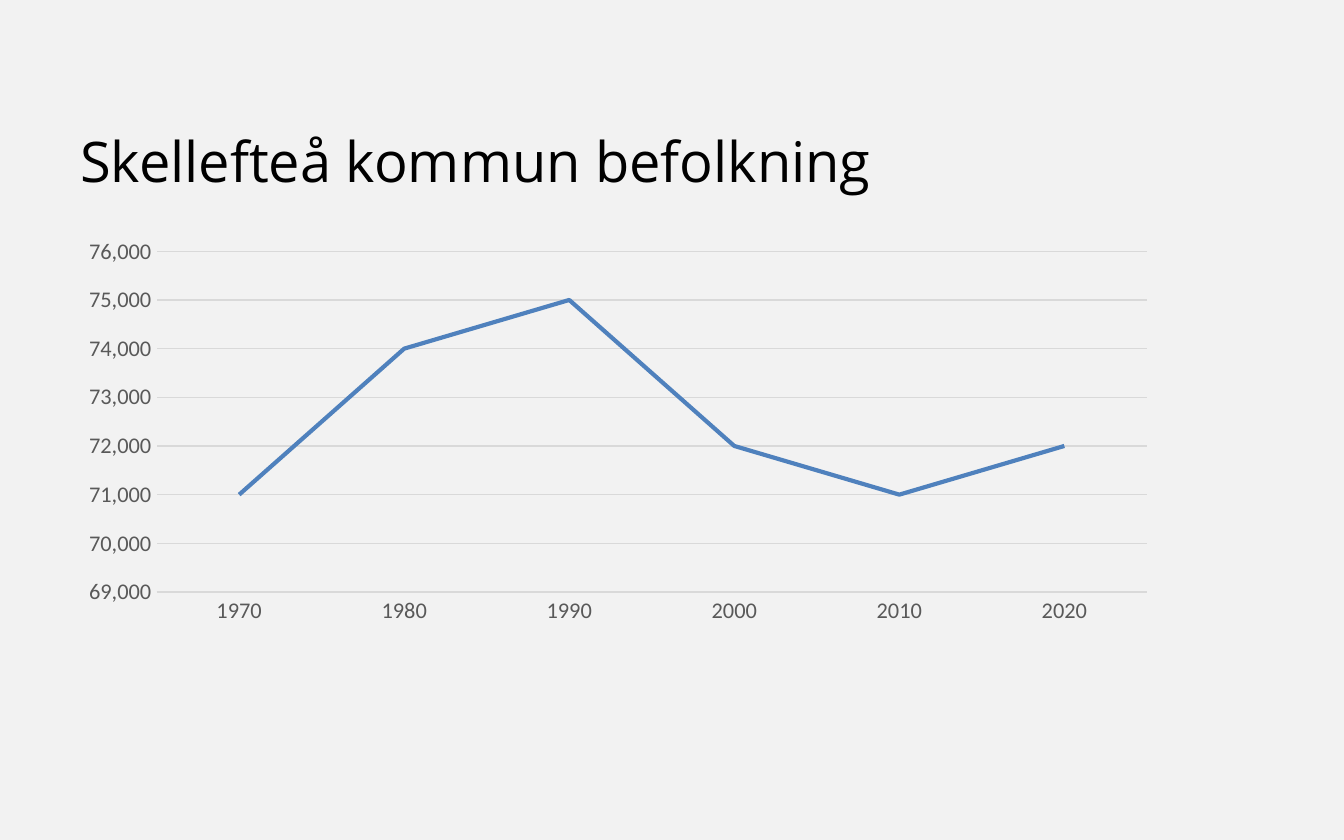
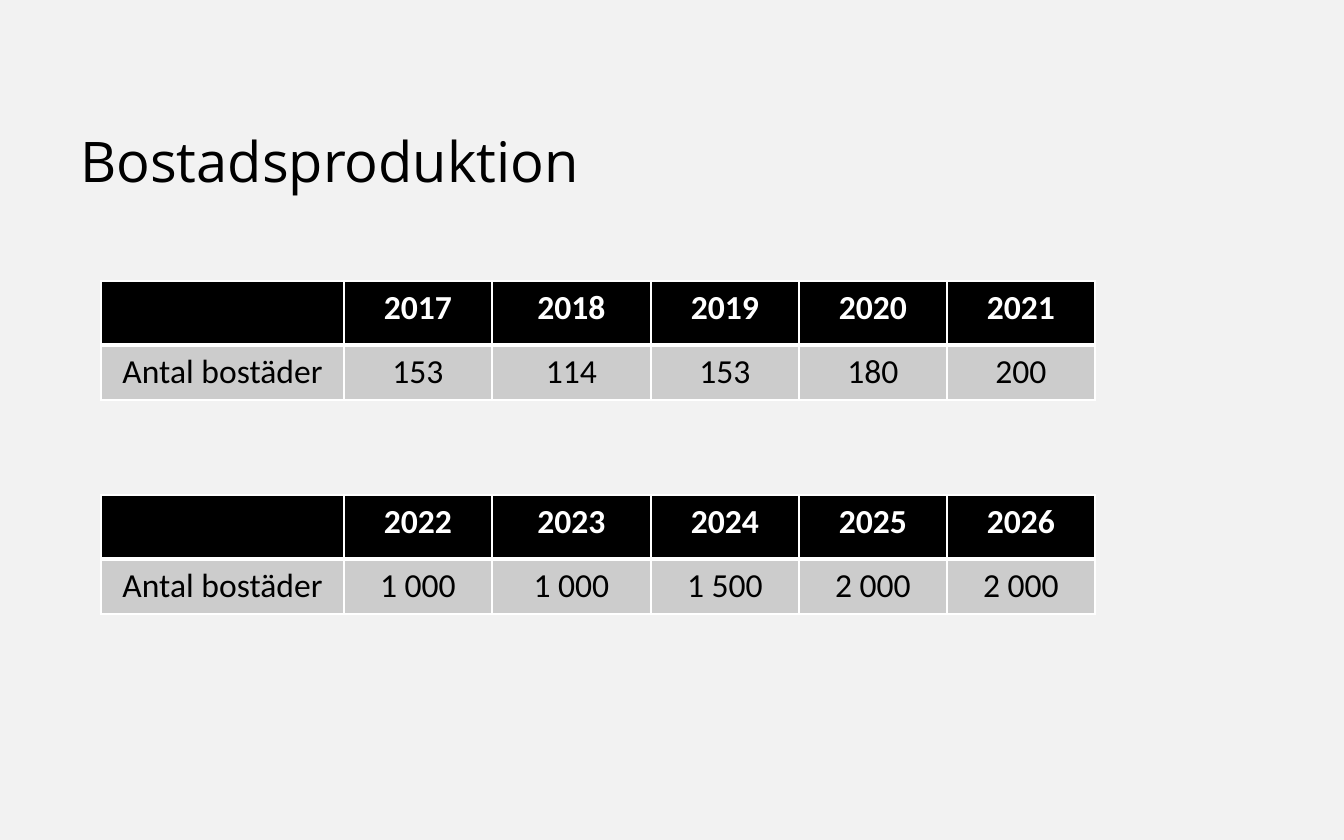
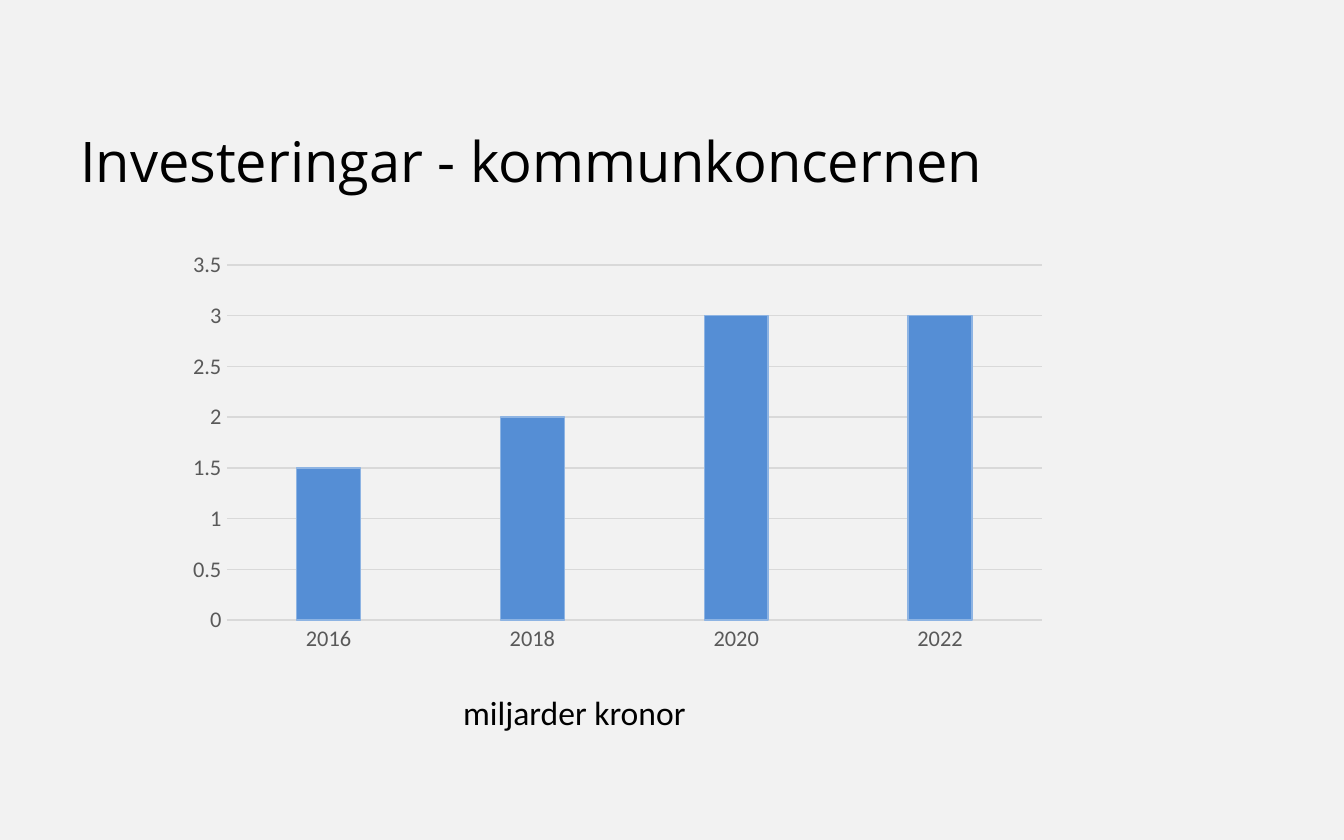
import pptx
import pptx.chart.data
import pptx.dml.color
import pptx.enum.chart
import pptx.enum.text
import pptx.oxml
import pptx.oxml.ns
import pptx.util

EMU_PER_PX = 914400 / 134.4
BLACK, WHITE, BACKGROUND = "000000", "FFFFFF", "F2F2F2"
AXIS_TEXT, GRID, CELL_GREY = "595959", "D9D9D9", "CCCCCC"
BODY_FONT, TITLE_FONT = "Calibri", "Open Sans"


def px(*lengths):
    return [pptx.util.Emu(round(length * EMU_PER_PX)) for length in lengths]


def color(value):
    return pptx.dml.color.RGBColor.from_string(value)


presentation = pptx.Presentation()
presentation.slide_width, presentation.slide_height = px(1344, 840)
background = presentation.slide_master.background.fill
background.solid()
background.fore_color.rgb = color(BACKGROUND)

# Slides and their titles
slides = []
for title in ["Skellefteå kommun befolkning", "Bostadsproduktion", "Investeringar - kommunkoncernen"]:
    slide = presentation.slides.add_slide(presentation.slide_layouts[6])
    title_frame = slide.shapes.add_textbox(*px(67, 90, 1210, 140)).text_frame
    title_frame.word_wrap = True
    title_frame.vertical_anchor = pptx.enum.text.MSO_ANCHOR.MIDDLE
    title_frame.text = title
    font = title_frame.paragraphs[0].runs[0].font
    font.name, font.size, font.color.rgb = TITLE_FONT, pptx.util.Pt(30), color(BLACK)
    slides.append(slide)
population_slide, housing_slide, investment_slide = slides

# Charts: slide, type, place, categories, values, axis range and step, number format
chart_types = pptx.enum.chart.XL_CHART_TYPE
chart_rows = [
    (population_slide, chart_types.LINE, (67, 230, 1102, 402),
     ["1970", "1980", "1990", "2000", "2010", "2020"],
     [71000, 74000, 75000, 72000, 71000, 72000], (69000, 76000, 1000), "#,##0"),
    (investment_slide, chart_types.COLUMN_CLUSTERED, (164, 198, 896, 515),
     ["2016", "2018", "2020", "2022"],
     [1.5, 2, 3, 3], (0, 3.5, 0.5), "General"),
]
charts = []
for slide, chart_type, place, categories, values, axis_range, number_format in chart_rows:
    chart_data = pptx.chart.data.CategoryChartData(number_format=number_format)
    chart_data.categories = categories
    chart_data.add_series("Series 1", values)
    chart = slide.shapes.add_chart(chart_type, *px(*place), chart_data).chart
    chart.has_legend = False
    chart.has_title = False
    chart.font.name, chart.font.size = BODY_FONT, pptx.util.Pt(10)
    chart.plots[0].vary_by_categories = False

    value_axis, category_axis = chart.value_axis, chart.category_axis
    for axis in (value_axis, category_axis):
        axis.major_tick_mark = axis.minor_tick_mark = pptx.enum.chart.XL_TICK_MARK.NONE
        font = axis.tick_labels.font
        font.name, font.size, font.color.rgb = BODY_FONT, pptx.util.Pt(12), color(AXIS_TEXT)
    value_axis.minimum_scale, value_axis.maximum_scale, value_axis.major_unit = axis_range
    value_axis.tick_labels.number_format = number_format
    value_axis.tick_labels.number_format_is_linked = False
    value_axis.format.line.fill.background()
    for line in (value_axis.major_gridlines.format.line, category_axis.format.line):
        line.color.rgb, line.width = color(GRID), pptx.util.Pt(0.75)
    charts.append(chart)
population_chart, investment_chart = charts

# Population line
population = population_chart.plots[0].series[0]
population.smooth = False
population.marker.style = pptx.enum.chart.XL_MARKER_STYLE.NONE
population.format.line.color.rgb = color("4F81BD")
population.format.line.width = pptx.util.Pt(2.25)

# Investment columns
investment_plot = investment_chart.plots[0]
investment_plot.gap_width, investment_plot.overlap = 219, -27
columns = investment_plot.series[0].format
columns.fill.solid()
columns.fill.fore_color.rgb = color("558ED5")
columns.line.color.rgb, columns.line.width = color("8EB4E3"), pptx.util.Pt(0.75)

plot_area = investment_chart.element.find(".//" + pptx.oxml.ns.qn("c:plotArea"))
for layout in plot_area.findall(pptx.oxml.ns.qn("c:layout")):
    plot_area.remove(layout)
settings = [("layoutTarget", "inner"), ("xMode", "edge"), ("yMode", "edge"),
            ("x", 0.07), ("y", 0.13), ("w", 0.91), ("h", 0.69)]
layout_items = "".join(f'<c:{name} val="{value}"/>' for name, value in settings)
plot_area.insert(0, pptx.oxml.parse_xml(
    f'<c:layout {pptx.oxml.ns.nsdecls("c")}><c:manualLayout>{layout_items}</c:manualLayout></c:layout>'))

# Housing tables: top, years, number of homes
column_widths = px(243, 148, 159, 148, 148, 148)
row_heights = px(64, 55)
for top, years, homes in [
    (281, ["2017", "2018", "2019", "2020", "2021"], ["153", "114", "153", "180", "200"]),
    (495, ["2022", "2023", "2024", "2025", "2026"], ["1 000", "1 000", "1 500", "2 000", "2 000"]),
]:
    table = housing_slide.shapes.add_table(2, 6, *px(101, top, 994, 119)).table
    for column, width in zip(table.columns, column_widths):
        column.width = width
    for row, height in zip(table.rows, row_heights):
        row.height = height
    row_styles = [
        (["", *years], BLACK, WHITE, True, {"L": 1, "R": 1, "T": 1, "B": 3}),
        (["Antal bostäder", *homes], CELL_GREY, BLACK, False, {"L": 1, "R": 1, "T": 3, "B": 1}),
    ]
    for row, (texts, fill, text_color, bold, borders) in zip(table.rows, row_styles):
        for cell, text in zip(row.cells, texts):
            cell.text_frame.text = text
            paragraph = cell.text_frame.paragraphs[0]
            paragraph.alignment = pptx.enum.text.PP_ALIGN.CENTER
            for run in paragraph.runs:
                run.font.name, run.font.size = BODY_FONT, pptx.util.Pt(18)
                run.font.bold, run.font.color.rgb = bold, color(text_color)
            cell.fill.solid()
            cell.fill.fore_color.rgb = color(fill)
            properties = cell._tc.get_or_add_tcPr()
            for position, (side, points) in enumerate(borders.items()):
                properties.insert(position, pptx.oxml.parse_xml(
                    f'<a:ln{side} {pptx.oxml.ns.nsdecls("a")} w="{pptx.util.Pt(points)}">'
                    f'<a:solidFill><a:srgbClr val="{WHITE}"/></a:solidFill></a:ln{side}>'))

# Unit below the investment chart
unit_frame = investment_slide.shapes.add_textbox(*px(450, 685, 251, 54)).text_frame
unit_frame.word_wrap = False
unit_frame.auto_size = pptx.enum.text.MSO_AUTO_SIZE.SHAPE_TO_FIT_TEXT
unit_frame.text = "miljarder kronor"
font = unit_frame.paragraphs[0].runs[0].font
font.name, font.size, font.color.rgb = BODY_FONT, pptx.util.Pt(18), color(BLACK)

presentation.save("out.pptx")
